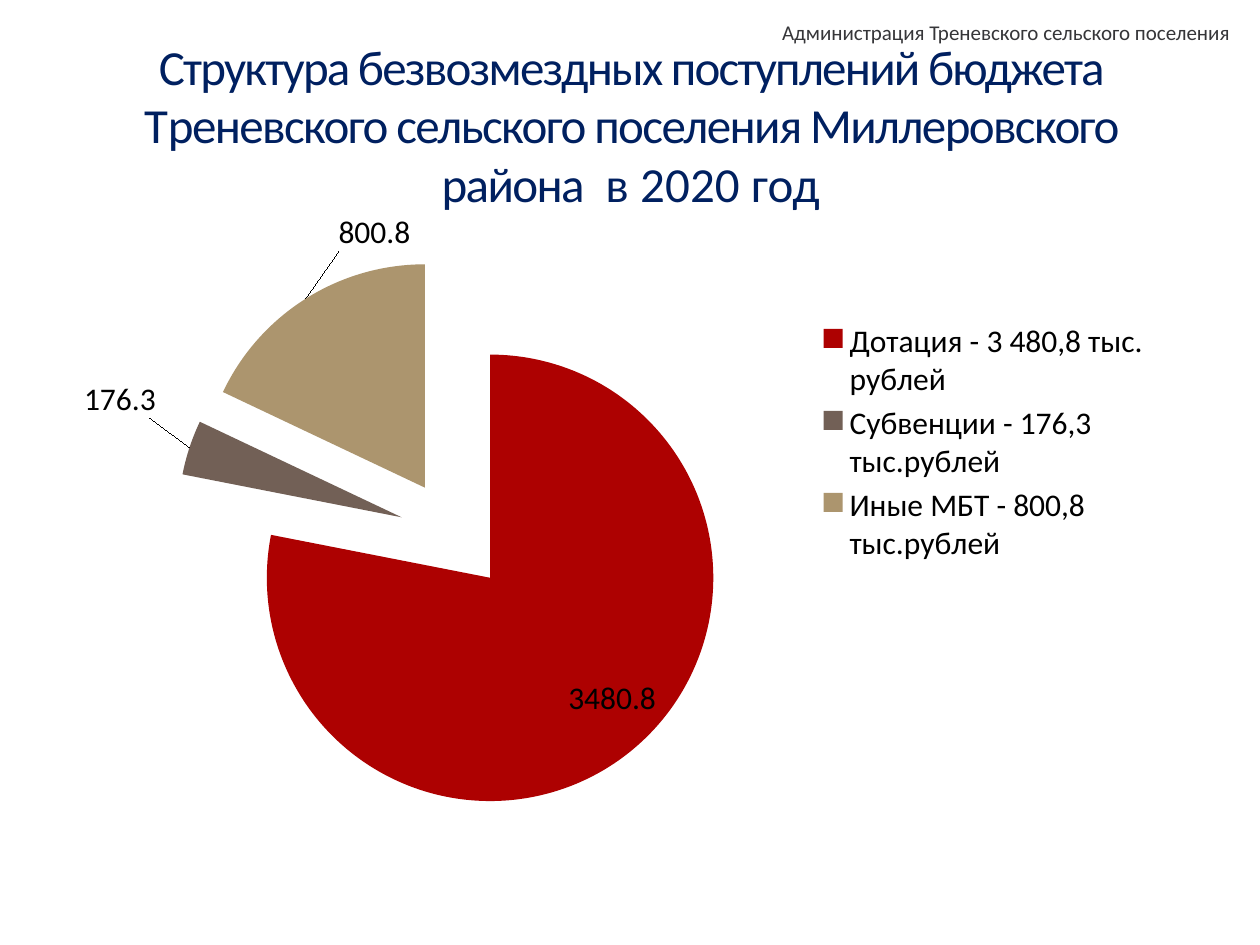
from typing import NamedTuple

from lxml.etree import SubElement
from pptx import Presentation
from pptx.chart.data import CategoryChartData
from pptx.dml.color import RGBColor
from pptx.enum.chart import XL_CHART_TYPE as ChartType
from pptx.enum.chart import XL_LABEL_POSITION as LabelPos
from pptx.enum.chart import XL_LEGEND_POSITION as LegendPos
from pptx.enum.text import MSO_ANCHOR as Anchor
from pptx.enum.text import PP_ALIGN as Align
from pptx.oxml.ns import qn
from pptx.util import Pt

FONT = "Calibri"


class Sector(NamedTuple):
    name: str
    value: float
    color: str
    label_shift: tuple[float, float] | None = None


SECTORS = [
    Sector("Дотация - 3 480,8 тыс. рублей", 3480.8, "AD0101"),
    Sector("Субвенции - 176,3 тыс.рублей", 176.3, "726056", (-0.03, -0.04)),
    Sector("Иные МБТ - 800,8 тыс.рублей", 800.8, "AC956E", (0.1, -0.06)),
]


def rgb(color: str) -> RGBColor:
    return RGBColor.from_string(color)


def place(sp, left: float, top: float, width: float, height: float) -> None:
    sp.left, sp.top, sp.width, sp.height = map(Pt, (left, top, width, height))


def write(sp, runs: list[tuple[str, float]], *, size: float, color: str, align: Align) -> None:
    """Fill a shape with one paragraph of (text, letter spacing in points) runs."""
    tf = sp.text_frame
    tf.word_wrap = True
    tf.vertical_anchor = Anchor.MIDDLE
    tf.margin_left = tf.margin_right = tf.margin_top = tf.margin_bottom = 0
    p = tf.paragraphs[0]
    p.alignment = align
    p.line_spacing = 1.0
    for text, spacing in runs:
        r = p.add_run()
        r.text = text
        r.font.size, r.font.name, r.font.bold = Pt(size), FONT, False
        r.font.color.rgb = rgb(color)
        if spacing:
            r.font._element.set("spc", str(round(spacing * 100)))


def set_layout(parent, index: int, **values: str | float) -> None:
    """Give a chart part a manual layout, as its child at the given index."""
    for old in parent.findall(qn("c:layout")):
        parent.remove(old)
    layout = SubElement(parent, qn("c:layout"))
    manual = SubElement(layout, qn("c:manualLayout"))
    for tag, value in values.items():
        SubElement(manual, qn(f"c:{tag}")).set("val", str(value))
    parent.insert(index, layout)


def add_pie(slide, sectors: list[Sector], box: tuple[float, float, float, float]) -> None:
    data = CategoryChartData()
    data.categories = [s.name for s in sectors]
    data.add_series("Series 1", [s.value for s in sectors])
    chart = slide.shapes.add_chart(ChartType.PIE, *map(Pt, box), data).chart
    chart.has_title = False
    chart.font.size, chart.font.name = Pt(18), FONT
    chart.font.color.rgb = rgb("000000")

    # Plot area and legend
    edge = {"xMode": "edge", "yMode": "edge"}
    set_layout(chart._chartSpace.chart.plotArea, 0, layoutTarget="inner", **edge,
               x=0.06, y=0.08, w=0.56, h=0.82)
    chart.has_legend = True
    chart.legend.position = LegendPos.RIGHT
    chart.legend.include_in_layout = False
    set_layout(chart.legend._element, 1, **edge, x=0.67, y=0.17, w=0.31, h=0.37)

    # Value labels with leader lines
    plot = chart.plots[0]
    plot.vary_by_categories = True
    series = plot.series[0]
    labels = series.data_labels
    labels.show_value = True
    labels.position = LabelPos.BEST_FIT
    leader = labels._element.find(qn("c:showLeaderLines"))
    if leader is None:
        leader = SubElement(labels._element, qn("c:showLeaderLines"))
    leader.set("val", "1")

    # Sectors pulled apart
    for i, sector in enumerate(sectors):
        point = series.points[i]
        point.format.fill.solid()
        point.format.fill.fore_color.rgb = rgb(sector.color)
        if sector.label_shift:
            point.data_label.position = LabelPos.BEST_FIT
            x, y = sector.label_shift
            d_lbl = next(d for d in labels._element.findall(qn("c:dLbl"))
                         if d.find(qn("c:idx")).get("val") == str(i))
            set_layout(d_lbl, 1, x=x, y=y)
    explosion = SubElement(series._element, qn("c:explosion"))
    explosion.set("val", "25")
    series._element.find(qn("c:dPt")).addprevious(explosion)


def main() -> None:
    prs = Presentation()
    prs.slide_width, prs.slide_height = Pt(720), Pt(540)
    slide = prs.slides.add_slide(prs.slide_layouts[5])

    # Title
    title = slide.shapes.title
    place(title, 52, 32.5, 617, 77)
    write(title, [("Структура безвозмездных поступлений бюджета Т", -1),
                  ("реневского сельского поселения Миллеровского района ", -0.9),
                  (" в 2020 год", 0.1)],
          size=28, color="002060", align=Align.CENTER)

    # Revenue chart
    add_pie(slide, SECTORS, (48, 115, 623, 389))

    # Administration name
    header = slide.shapes.add_textbox(Pt(255), Pt(10), Pt(448), Pt(17))
    write(header, [("Администрация Треневского сельского поселения", 0)],
          size=12, color="363639", align=Align.RIGHT)

    prs.save("out.pptx")


if __name__ == "__main__":
    main()
